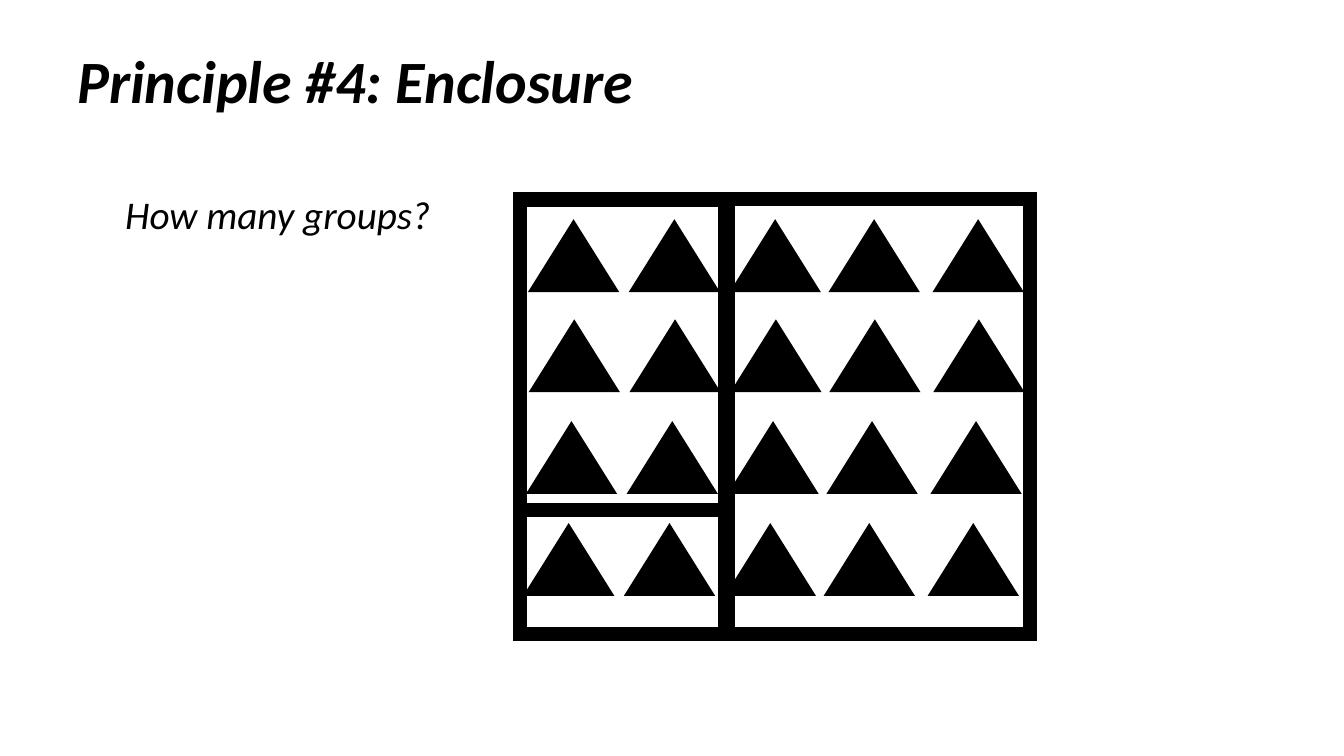
"""Build the slide on the enclosure principle with its grouped triangles."""
import dataclasses

import lxml.etree
import pptx
import pptx.dml.color
import pptx.enum.shapes
import pptx.enum.text
import pptx.oxml.ns
import pptx.util

Pt = pptx.util.Pt
Shape = pptx.enum.shapes.MSO_SHAPE
Align = pptx.enum.text.PP_ALIGN
Anchor = pptx.enum.text.MSO_ANCHOR


@dataclasses.dataclass(frozen=True)
class Theme:
    ink: pptx.dml.color.RGBColor = pptx.dml.color.RGBColor(0, 0, 0)
    font: str = "Calibri"
    title_size: float = 42.9
    question_size: float = 28
    triangle_line: float = 1
    enclosure_line: float = 10


theme = Theme()


def write(box, wording, size, bold, align, anchor):
    frame = box.text_frame
    frame.text = wording
    frame.word_wrap = True
    frame.auto_size = pptx.enum.text.MSO_AUTO_SIZE.NONE
    frame.vertical_anchor = anchor
    paragraph = frame.paragraphs[0]
    paragraph.alignment = align
    font = paragraph.runs[0].font
    font.name, font.size, font.bold, font.italic = theme.font, Pt(size), bold, True
    font.color.rgb = theme.ink


def draw(shapes, kind, left, top, width, height, weight):
    figure = shapes.add_shape(kind, Pt(left), Pt(top), Pt(width), Pt(height))
    figure.shadow.inherit = False
    figure.line.color.rgb = theme.ink
    figure.line.width = Pt(weight)
    outline = figure.line._get_or_add_ln()
    lxml.etree.SubElement(outline, pptx.oxml.ns.qn("a:miter"), lim="800000")
    return figure


deck = pptx.Presentation()
deck.slide_width, deck.slide_height = Pt(960), Pt(540)
slide = deck.slides.add_slide(deck.slide_layouts[5])

title = slide.shapes.title
title.left, title.top, title.width, title.height = Pt(48), Pt(15), Pt(654.5), Pt(72)
write(title, "Principle #4: Enclosure", theme.title_size, True, Align.LEFT, Anchor.BOTTOM)
title.text_frame.paragraphs[0].line_spacing = 0.9

row_origins = [(378, 157.5), (378.5, 229), (376.5, 301.7), (374.5, 374.5)]
column_offsets = [0, 72, 144, 214.7, 289]
for row_left, row_top in row_origins:
    row = slide.shapes.add_group_shape()
    for offset in column_offsets:
        triangle = draw(row.shapes, Shape.ISOSCELES_TRIANGLE, row_left + offset, row_top,
                        63.4, 50.6, theme.triangle_line)
        triangle.fill.solid()
        triangle.fill.fore_color.rgb = theme.ink

question = slide.shapes.add_textbox(Pt(79.2), Pt(132.5), Pt(238.3), Pt(41))
write(question, "How many groups?", theme.question_size, False, Align.CENTER, Anchor.TOP)

left_edge, right_edge, top_edge = 371.5, 520, 142.5
left_width, right_width = 146.2, 216
upper_height, lower_height = 221.8, 88.6
enclosures = [
    (left_edge, top_edge, left_width, upper_height),
    (right_edge, top_edge, right_width, upper_height + lower_height),
    (left_edge, top_edge + upper_height, left_width, lower_height),
]
for bounds in enclosures:
    enclosure = draw(slide.shapes, Shape.RECTANGLE, *bounds, theme.enclosure_line)
    enclosure.fill.background()

deck.save("out.pptx")
